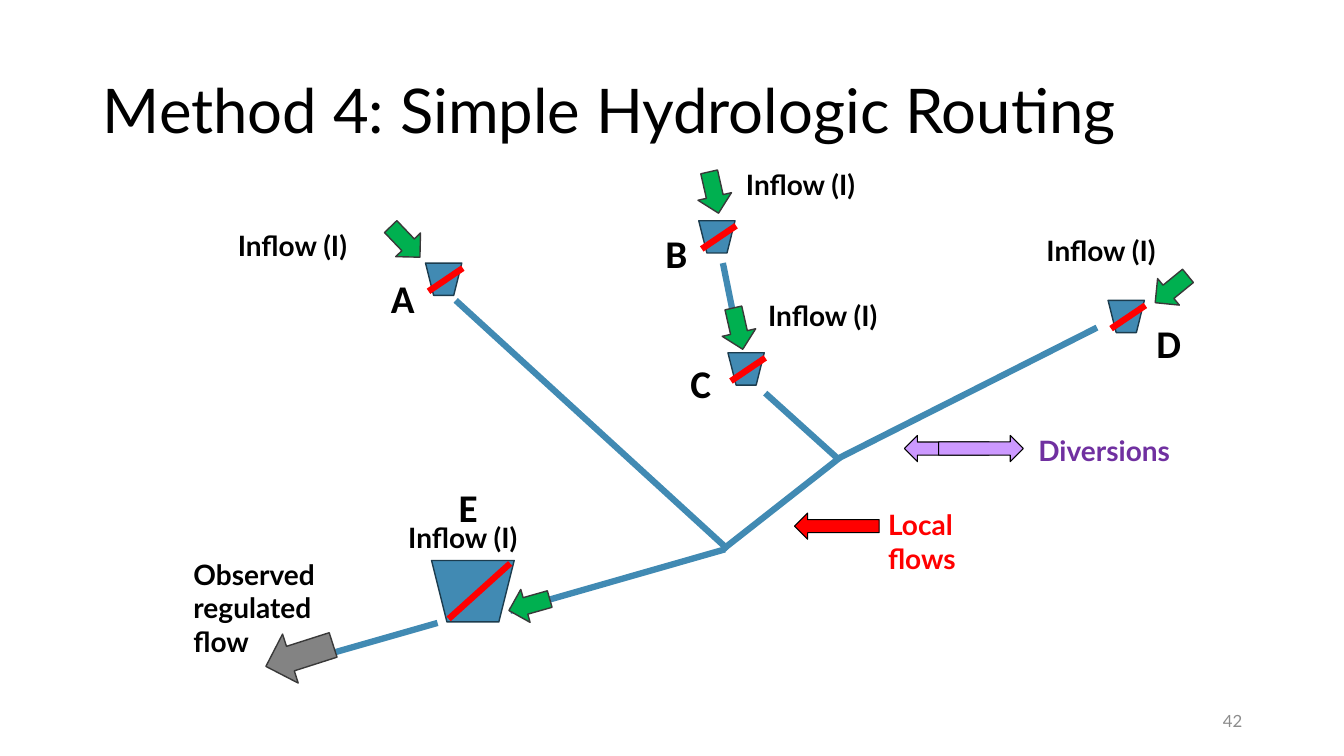
import pptx
import pptx.dml.color
import pptx.enum.shapes
import pptx.enum.text
import pptx.oxml.ns
import pptx.util
from collections import namedtuple
from lxml import etree

Inches = pptx.util.Inches
Pt = pptx.util.Pt
RGBColor = pptx.dml.color.RGBColor
MSO_SHAPE = pptx.enum.shapes.MSO_SHAPE
PP_ALIGN = pptx.enum.text.PP_ALIGN
MSO_ANCHOR = pptx.enum.text.MSO_ANCHOR

BLACK = RGBColor(0x00, 0x00, 0x00)
RIVER_BLUE = RGBColor(0x41, 0x8A, 0xB3)
DAM_EDGE = RGBColor(0x1C, 0x3C, 0x4E)
INFLOW_GREEN = RGBColor(0x00, 0xB0, 0x50)
ARROW_EDGE = RGBColor(0x39, 0x39, 0x39)
OUTFLOW_GRAY = RGBColor(0x83, 0x83, 0x83)
RED = RGBColor(0xFF, 0x00, 0x00)
LILAC = RGBColor(0xCC, 0x99, 0xFF)
PURPLE = RGBColor(0x70, 0x30, 0xA0)
NUMBER_GRAY = RGBColor(0x8C, 0x8C, 0x8C)

SMALL_DAM = (0.36, 0.32)
LARGE_DAM = (0.82, 0.61)
SMALL_SLASH = ((0.37, 0.05), (0.03, 0.28))
LARGE_SLASH = ((0.78, 0.03), (0.17, 0.58))
INFLOW_SIZE = (0.42, 0.34)
SIDE_ARROW_SIZE = (0.84, 0.26)

Reservoir = namedtuple(
    "Reservoir", "letter letter_at dam_at dam_size slash arrow_at arrow_angle inflow_at")

RESERVOIRS = [
    Reservoir("A", (3.78, 2.67), (4.22, 2.61), SMALL_DAM, SMALL_SLASH,
              (3.81, 2.23), 46.3, (2.26, 2.22)),
    Reservoir("B", (6.5, 2.23), (6.93, 2.19), SMALL_DAM, SMALL_SLASH,
              (6.87, 1.74), 77.2, (7.3, 1.61)),
    Reservoir("C", (6.75, 3.52), (7.22, 3.5), SMALL_DAM, SMALL_SLASH,
              (7.11, 3.09), 77.2, (7.52, 2.91)),
    Reservoir("D", (11.37, 3.12), (10.99, 2.98), SMALL_DAM, SMALL_SLASH,
              (11.41, 2.7), 140.7, (10.28, 2.27)),
    Reservoir("E", (4.45, 4.75), (4.28, 5.56), LARGE_DAM, LARGE_SLASH,
              (5.04, 5.83), 164.2, (3.95, 5.11)),
]

RIVERS = [
    ((4.52, 2.98), (7.22, 5.45)),
    ((10.88, 3.25), (8.31, 4.55)),
    ((7.17, 2.61), (7.33, 3.4)),
    ((7.59, 3.9), (8.31, 4.55)),
    ((8.33, 4.54), (7.17, 5.45)),
    ((7.19, 5.45), (5.06, 6.06)),
    ((4.34, 6.18), (3.22, 6.5)),
]


def write_text(frame, text, points=20, font="Lato", color=BLACK, bold=True,
               align=PP_ALIGN.LEFT, anchor=MSO_ANCHOR.TOP, spacing=1.0):
    frame.word_wrap = True
    frame.auto_size = pptx.enum.text.MSO_AUTO_SIZE.NONE
    frame.vertical_anchor = anchor
    frame.text = text
    paragraph = frame.paragraphs[0]
    paragraph.alignment = align
    paragraph.line_spacing = spacing
    paragraph.font.size = Pt(points)
    paragraph.font.name = font
    paragraph.font.bold = bold
    paragraph.font.color.rgb = color


def add_label(slide, text, at, size, **text_format):
    label = slide.shapes.add_textbox(*map(Inches, at + size))
    write_text(label.text_frame, text, **text_format)


def add_title(slide, text):
    title = slide.shapes.title
    title.left, title.top = Inches(0.92), Inches(0.4)
    title.width, title.height = Inches(11.5), Inches(1.45)
    write_text(title.text_frame, text, points=44, bold=False,
               anchor=MSO_ANCHOR.MIDDLE, spacing=0.9)


def add_line(slide, start, end, color):
    line = slide.shapes.add_connector(
        pptx.enum.shapes.MSO_CONNECTOR.STRAIGHT, *map(Inches, start + end))
    line.line.color.rgb = color
    line.line.width = Pt(4.5)
    etree.SubElement(line._element.spPr, pptx.oxml.ns.qn("a:effectLst"))


def add_rotated(slide, preset, at, size, angle, fill, edge, edge_width=1):
    shape = slide.shapes.add_shape(preset, *map(Inches, at + size))
    shape.rotation = angle
    shape.shadow.inherit = False
    shape.fill.solid()
    shape.fill.fore_color.rgb = fill
    shape.line.color.rgb = edge
    shape.line.width = Pt(edge_width)


def add_arrow(slide, at, size, angle, fill, edge=ARROW_EDGE, edge_width=1):
    add_rotated(slide, MSO_SHAPE.RIGHT_ARROW, at, size, angle, fill, edge, edge_width)


def add_reservoir(slide, reservoir):
    left, top = reservoir.dam_at
    add_rotated(slide, MSO_SHAPE.TRAPEZOID, reservoir.dam_at, reservoir.dam_size,
                180, RIVER_BLUE, DAM_EDGE)
    start, end = [(left + dx, top + dy) for dx, dy in reservoir.slash]
    add_line(slide, start, end, RED)
    add_arrow(slide, reservoir.arrow_at, INFLOW_SIZE, reservoir.arrow_angle, INFLOW_GREEN)
    add_label(slide, "Inflow (I)", reservoir.inflow_at, (1.78, 0.44))
    add_label(slide, reservoir.letter, reservoir.letter_at, (0.5, 0.57),
              points=28, font="Calibri")


def main():
    deck = pptx.Presentation()
    deck.slide_width, deck.slide_height = Inches(13.33), Inches(7.5)
    slide = deck.slides.add_slide(deck.slide_layouts.get_by_name("Title Only"))

    add_title(slide, "Method 4: Simple Hydrologic Routing")
    for start, end in RIVERS:
        add_line(slide, start, end, RIVER_BLUE)
    for reservoir in RESERVOIRS:
        add_reservoir(slide, reservoir)

    add_arrow(slide, (2.62, 6.25), (0.7, 0.51), 162.3, OUTFLOW_GRAY)
    add_label(slide, "Observed regulated flow", (1.82, 5.48), (1.98, 0.77))

    for at, angle, fill in [((7.88, 5.09), 180, RED),
                            ((8.97, 4.32), 180, LILAC),
                            ((9.31, 4.32), 0, LILAC)]:
        add_arrow(slide, at, SIDE_ARROW_SIZE, angle, fill, BLACK, 0.75)
    add_label(slide, "Local flows", (8.71, 4.99), (1.5, 0.44), color=RED)
    add_label(slide, "Diversions", (10.2, 4.25), (1.56, 0.44), color=PURPLE)

    add_label(slide, "42", (9.42, 6.95), (3, 0.4), points=12, color=NUMBER_GRAY,
              bold=False, align=PP_ALIGN.RIGHT, anchor=MSO_ANCHOR.MIDDLE)
    deck.save("out.pptx")


if __name__ == "__main__":
    main()
